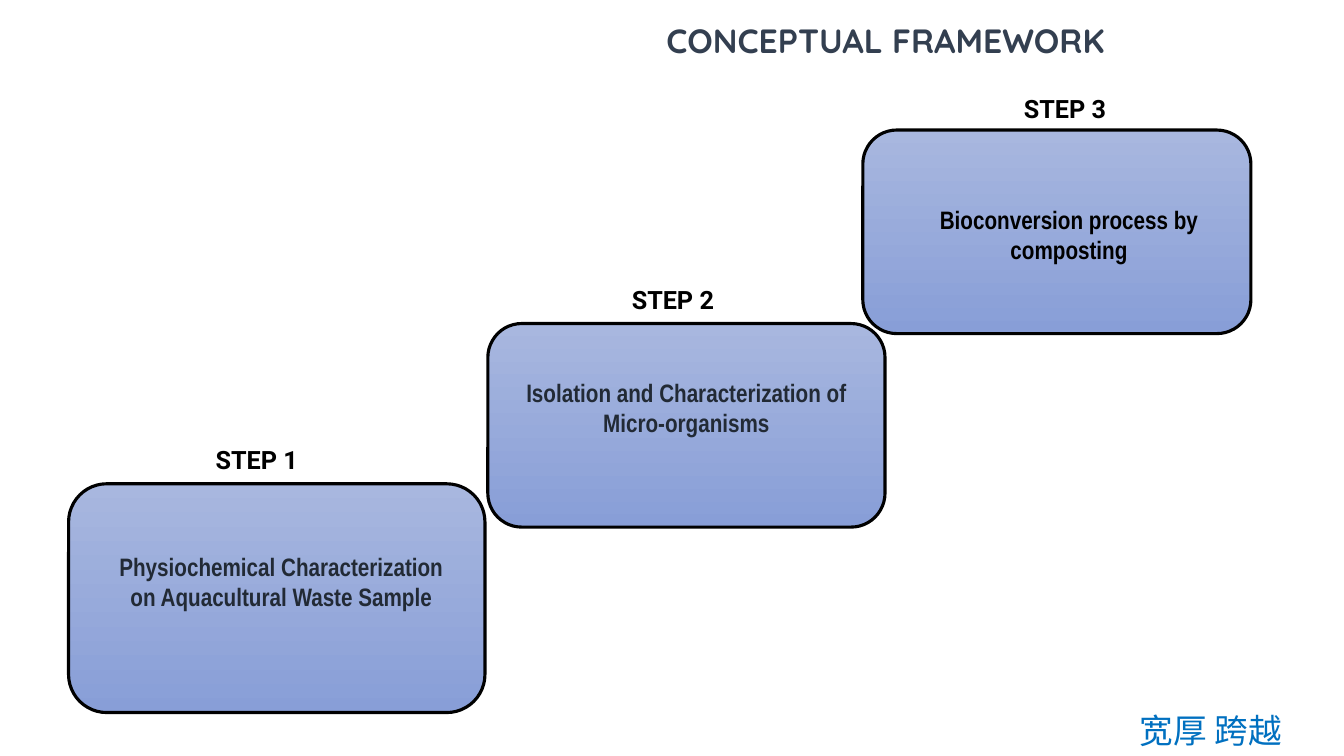
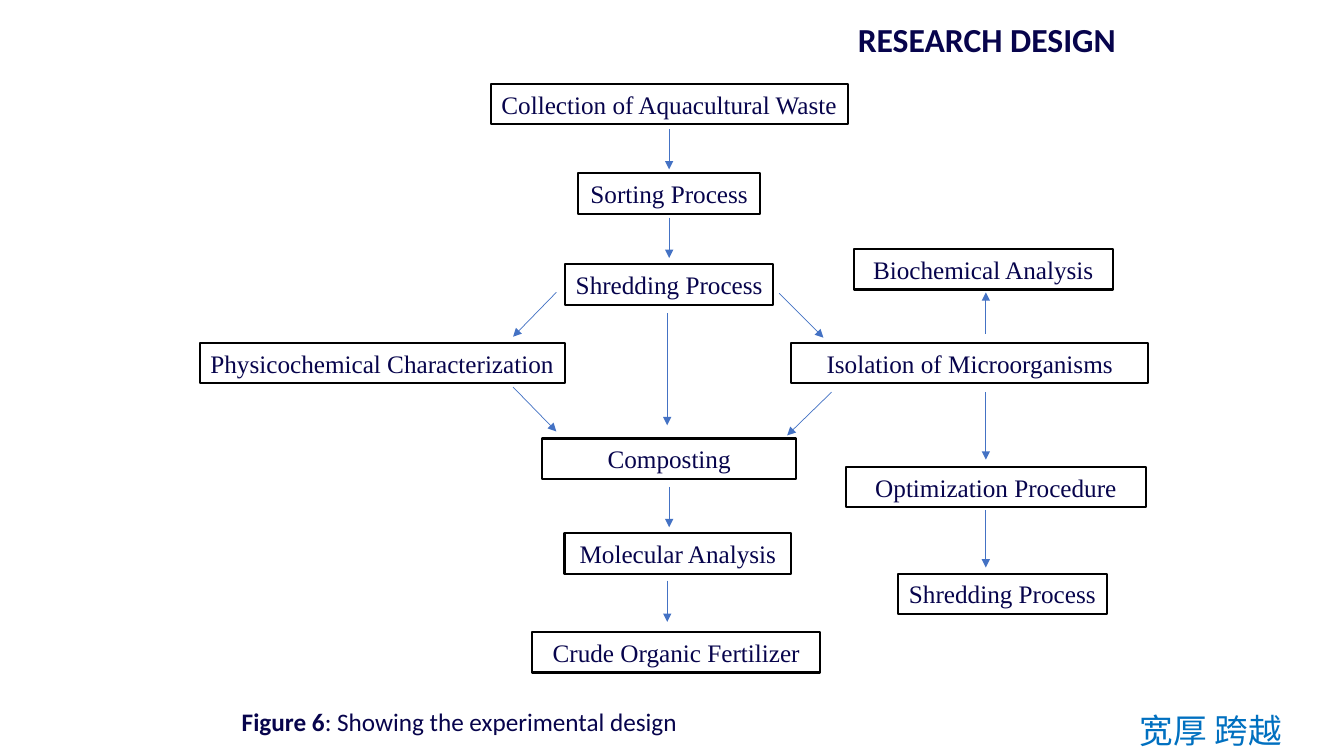
from lxml.etree import SubElement
from pptx import Presentation
from pptx.dml.color import RGBColor
from pptx.enum.shapes import MSO_CONNECTOR as Connector, MSO_SHAPE as Shape
from pptx.enum.text import MSO_ANCHOR as Anchor, MSO_AUTO_SIZE as AutoSize, PP_ALIGN as Align
from pptx.oxml.ns import qn
from pptx.util import Pt

BLACK, SLATE, DARK_SLATE = "000000", "333F50", "222A35"
NAVY, BLUE, FOOTER_BLUE = "07044C", "4472C4", "0070C0"
STEP_TOP, STEP_BOTTOM = "A8B7DF", "889ED7"
FOOTER, FOOTER_FONT = "宽厚 跨越", "Noto Sans CJK SC"
LABEL_WIDTH, LABEL_HEIGHT = 101.5, 32.4
NODE_HEIGHT = 29

# label, label position, text, text colour, box (left, top, width, height), insets (left, right, top)
STEPS = [
    ("STEP 1", (146.9, 313.9), "Physiochemical Characterization on Aquacultural Waste Sample",
     DARK_SLATE, (49, 345.6, 297.4, 163.4), (19.5, 13, 40)),
    ("STEP 2", (444.2, 199.4), "Isolation and Characterization of Micro-organisms",
     DARK_SLATE, (348.5, 231.1, 283.7, 145.4), (10, 10, 31)),
    ("STEP 3", (724.3, 63.4), "Bioconversion process by composting",
     BLACK, (616.3, 92.9, 277.2, 145.4), (17.4, 0, 46)),
]

# text, centre, top, width
NODES = [
    ("Collection of Aquacultural Waste", 478, 59.8, 255),
    ("Sorting Process", 478, 123.8, 130.3),
    ("Shredding Process", 478, 188.6, 149),
    ("Physicochemical Characterization", 273, 244.8, 260.6),
    ("Isolation of Microorganisms", 692.7, 244.8, 255),
    ("Biochemical Analysis", 702.4, 177.8, 185),
    ("Composting", 478, 313.2, 181.4),
    ("Optimization Procedure", 711.4, 333.4, 214.6),
    ("Shredding Process", 716, 409.7, 149),
    ("Molecular Analysis", 484.2, 380.9, 162),
    ("Crude Organic Fertilizer", 483, 451.4, 206),
]

# x, from y, to y
VERTICAL_ARROWS = [
    (478, 92.2, 121), (478, 155.5, 184.3), (476.6, 223.9, 303.8),
    (478, 347.8, 376.6), (476.6, 414.7, 444.2),
    (704.2, 238.3, 208.8), (704.2, 280.1, 328.3), (704.2, 364.3, 405.4),
]
# from x, from y, to x, to y
DIAGONAL_ARROWS = [
    (397.4, 208.8, 366.5, 240.5), (556.6, 209.5, 588.2, 241.2),
    (366.5, 276.5, 397.4, 308.2), (594, 280.1, 562.3, 311),
]


def rgb(color):
    return RGBColor.from_string(color)


def style(paragraph, font_name, size, color, bold=False, align=Align.LEFT):
    paragraph.alignment = align
    font = paragraph.font
    font.name, font.size, font.bold = font_name, Pt(size), bold
    font.color.rgb = rgb(color)


def add_text(slide, text, left, top, width, height, wrap=True):
    """Add a text box and return its first paragraph."""
    frame = slide.shapes.add_textbox(Pt(left), Pt(top), Pt(width), Pt(height)).text_frame
    frame.word_wrap = wrap
    frame.text = text
    return frame.paragraphs[0]


def add_box(slide, kind, left, top, width, height, line_width):
    box = slide.shapes.add_shape(kind, Pt(left), Pt(top), Pt(width), Pt(height))
    box.shadow.inherit = False
    box.line.color.rgb = rgb(BLACK)
    box.line.width = Pt(line_width)
    return box


def add_titled_slide(prs, title, left, top, width, font_name, color):
    slide = prs.slides.add_slide(prs.slide_layouts[5])
    heading = slide.shapes.title
    heading.left, heading.top, heading.width, heading.height = Pt(left), Pt(top), Pt(width), Pt(36)
    frame = heading.text_frame
    frame.text = title
    frame.word_wrap = False
    frame.auto_size = AutoSize.NONE
    frame.vertical_anchor = Anchor.TOP
    style(frame.paragraphs[0], font_name, 24, color, bold=True)
    return slide


def move_footer_to_layout(slide):
    """Build the footer once and let the shared layout show it."""
    paragraph = add_text(slide, FOOTER, 807.1, 503.3, 117.4, 36, wrap=False)
    style(paragraph, FOOTER_FONT, 24, FOOTER_BLUE)
    run_properties = paragraph.runs[0]._r.get_or_add_rPr()
    SubElement(run_properties, qn("a:ea"), typeface=FOOTER_FONT)
    slide.slide_layout.shapes._spTree.append(slide.shapes[-1]._element)


def add_step(slide, label, label_at, text, color, bounds, insets):
    box = add_box(slide, Shape.ROUNDED_RECTANGLE, *bounds, 2.25)
    box.fill.gradient()
    box.fill.gradient_angle = 270
    for stop, stop_color in zip(box.fill.gradient_stops, (STEP_TOP, STEP_BOTTOM)):
        stop.color.rgb = rgb(stop_color)
    frame = box.text_frame
    frame.text = text
    frame.word_wrap = True
    frame.vertical_anchor = Anchor.TOP
    frame.margin_left, frame.margin_right, frame.margin_top = map(Pt, insets)
    style(frame.paragraphs[0], "Arial Narrow", 18, color, bold=True, align=Align.CENTER)
    style(add_text(slide, label, *label_at, LABEL_WIDTH, LABEL_HEIGHT), "Roboto", 18, BLACK, bold=True)


def add_node(slide, text, centre, top, width):
    node = add_box(slide, Shape.RECTANGLE, centre - width / 2, top, width, NODE_HEIGHT, 1.5)
    node.fill.background()
    frame = node.text_frame
    frame.text = text
    frame.word_wrap = False
    frame.vertical_anchor = Anchor.MIDDLE
    style(frame.paragraphs[0], "Times New Roman", 18, NAVY, align=Align.CENTER)


def add_arrow(slide, *ends):
    arrow = slide.shapes.add_connector(Connector.STRAIGHT, *map(Pt, ends))
    arrow.line.color.rgb = rgb(BLUE)
    arrow.line.width = Pt(0.5)
    SubElement(arrow.line._get_or_add_ln(), qn("a:tailEnd"), type="triangle")
    SubElement(arrow._element.spPr, qn("a:effectLst"))


def build_framework(prs):
    slide = add_titled_slide(prs, "CONCEPTUAL FRAMEWORK", 468.7, 8.6, 354.2, "Quicksand", SLATE)
    slide.shapes.title.text_frame.paragraphs[0].line_spacing = 1.07
    move_footer_to_layout(slide)
    for step in STEPS:
        add_step(slide, *step)


def build_design(prs):
    slide = add_titled_slide(prs, "RESEARCH DESIGN", 605.5, 10.1, 200.9, "Calibri", NAVY)
    for node in NODES:
        add_node(slide, *node)
    for x, start, end in VERTICAL_ARROWS:
        add_arrow(slide, x, start, x, end)
    for ends in DIAGONAL_ARROWS:
        add_arrow(slide, *ends)
    caption = add_text(slide, "Figure 6", 165.6, 501.1, 561.6, 29)
    style(caption, "Calibri", 18, NAVY)
    caption.runs[0].font.bold = True
    caption.add_run().text = ": Showing the experimental design"


def main():
    prs = Presentation()
    prs.slide_width, prs.slide_height = Pt(960), Pt(540)
    build_framework(prs)
    build_design(prs)
    prs.save("out.pptx")


if __name__ == "__main__":
    main()
